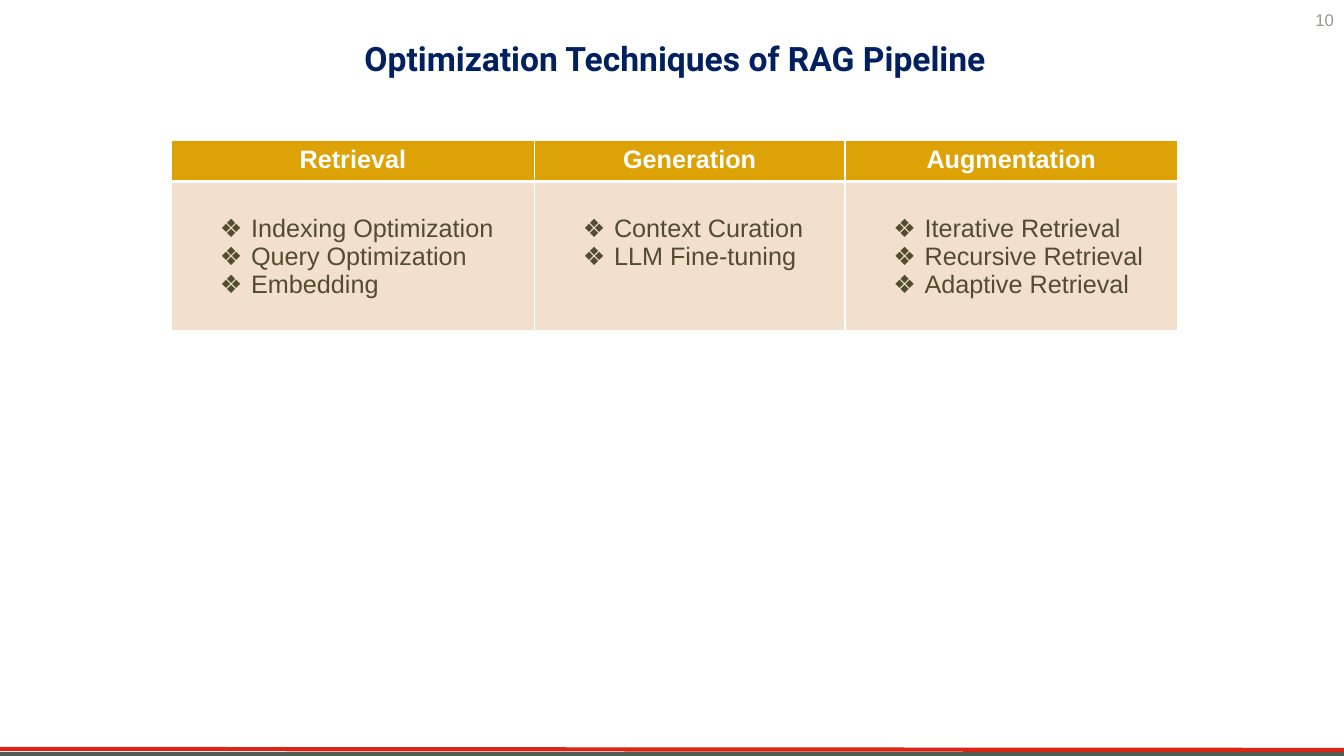
import pptx
import pptx.util
import pptx.dml.color
import pptx.enum.shapes
import pptx.enum.text
import pptx.oxml
import pptx.oxml.ns
from lxml import etree

Inches = pptx.util.Inches
Pt = pptx.util.Pt
Align = pptx.enum.text.PP_ALIGN
Anchor = pptx.enum.text.MSO_ANCHOR
qn = pptx.oxml.ns.qn


def paint(color, code):
    color.rgb = pptx.dml.color.RGBColor.from_string(code)


def style(part, size, code, bold=False, face="Arial"):
    for run in part.runs:
        run.font.name = face
        run.font.size = Pt(size)
        run.font.bold = bold
        paint(run.font.color, code)


deck = pptx.Presentation()
deck.slide_width = Inches(13.33)
deck.slide_height = Inches(7.5)
slide = deck.slides.add_slide(deck.slide_layouts[5])
shapes = slide.shapes

for start, end, code in [(7.43, 7.44, "DB2414"), (7.48, 7.48, "505B54")]:
    rule = shapes.add_connector(
        pptx.enum.shapes.MSO_CONNECTOR.STRAIGHT,
        0, Inches(start), deck.slide_width, Inches(end))
    rule.line.width = Pt(3)
    paint(rule.line.color, code)
    etree.SubElement(rule._element.spPr, qn("a:effectLst"))

title = shapes.title
title.left, title.top = Inches(1.03), Inches(0.18)
title.width, title.height = Inches(11.33), Inches(0.8)
frame = title.text_frame
frame.text = "Optimization Techniques of RAG Pipeline"
frame.auto_size = pptx.enum.text.MSO_AUTO_SIZE.NONE
frame.word_wrap = False
frame.vertical_anchor = Anchor.MIDDLE
frame.paragraphs[0].alignment = Align.CENTER
style(frame.paragraphs[0], 24, "002060", True, "Roboto")

number = shapes.add_textbox(Inches(12.89), 0, Inches(0.44), Inches(0.4))
frame = number.text_frame
frame.text = "10"
frame.word_wrap = True
frame.vertical_anchor = Anchor.MIDDLE
frame.paragraphs[0].alignment = Align.RIGHT
style(frame.paragraphs[0], 12, "989690")

stages = [
    ("Retrieval", 3.6,
     ["Indexing Optimization", "Query Optimization", "Embedding"]),
    ("Generation", 3.08,
     ["Context Curation", "LLM Fine-tuning"]),
    ("Augmentation", 3.3,
     ["Iterative Retrieval", "Recursive Retrieval", "Adaptive Retrieval"]),
]
heights = [0.41, 1.48]
table = shapes.add_table(
    2, len(stages), Inches(1.7), Inches(1.39),
    Inches(sum(stage[1] for stage in stages)), Inches(sum(heights))).table
for row, height in zip(table.rows, heights):
    row.height = Inches(height)

for col, (name, width, items) in enumerate(stages):
    table.columns[col].width = Inches(width)
    head, body = table.cell(0, col), table.cell(1, col)
    for cell, code, thick in [(head, "DDA206", "B"), (body, "F2E0CC", "T")]:
        props = cell._tc.get_or_add_tcPr()
        for side in "LRTB":
            weight = Pt(3 if side == thick else 1)
            edge = etree.SubElement(props, qn("a:ln" + side), w=str(int(weight)))
            fill = etree.SubElement(edge, qn("a:solidFill"))
            etree.SubElement(fill, qn("a:srgbClr"), val="FFFFFF")
        cell.fill.solid()
        paint(cell.fill.fore_color, code)

    head.text_frame.text = name
    head.text_frame.paragraphs[0].alignment = Align.CENTER
    style(head.text_frame.paragraphs[0], 18, "FFFFFF", True)

    body.margin_top = Inches(0.33)
    body.text_frame.text = "\n".join(items)
    for part in body.text_frame.paragraphs:
        part.level = 1
        props = part._p.get_or_add_pPr()
        props.set("marL", str(Inches(0.69)))
        props.set("indent", str(Inches(-0.31)))
        etree.SubElement(props, qn("a:buFont"), typeface="Arial")
        etree.SubElement(props, qn("a:buChar"), char="❖")
        style(part, 18, "524C31")

deck.save("out.pptx")
